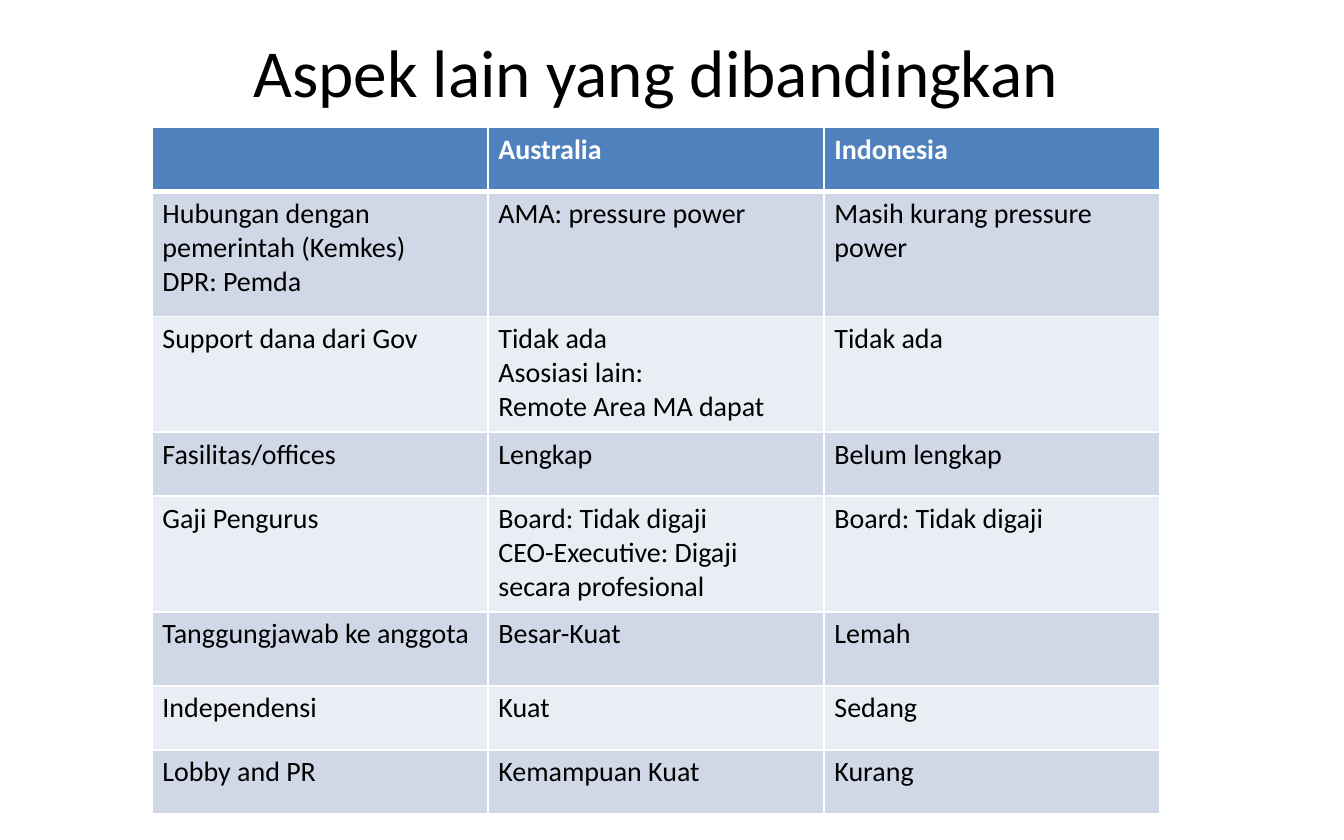
from lxml import etree
from pptx import Presentation
from pptx.dml.color import RGBColor
from pptx.enum import text
from pptx.oxml import ns
from pptx.util import Cm, Pt

LEFT, WIDTH = 2.87, 19.05
HEIGHTS = [1.21, 2.36, 2.19, 1.21, 2.19, 1.4, 1.21, 1.21]
ROWS = [
    ["", "Australia", "Indonesia"],
    ["Hubungan dengan pemerintah (Kemkes)\nDPR: Pemda", "AMA: pressure power", "Masih kurang pressure power"],
    ["Support dana dari Gov", "Tidak ada\nAsosiasi lain:\vRemote Area MA dapat", "Tidak ada"],
    ["Fasilitas/offices", "Lengkap", "Belum lengkap"],
    ["Gaji Pengurus", "Board: Tidak digaji\nCEO-Executive: Digaji secara profesional", "Board: Tidak digaji"],
    ["Tanggungjawab ke anggota", "Besar-Kuat", "Lemah"],
    ["Independensi", "Kuat", "Sedang"],
    ["Lobby and PR", "Kemampuan Kuat", "Kurang"],
]


def rgb(value):
    return RGBColor.from_string(value)


class Deck:
    font = "Calibri"
    white, black = "FFFFFF", "000000"
    header, bands = "4F81BD", ("E9EDF4", "D0D8E8")

    def __init__(self):
        self.prs = Presentation()
        self.prs.slide_width, self.prs.slide_height = Cm(25.4), Cm(15.88)
        self.s = self.prs.slides.add_slide(self.prs.slide_layouts[5])

    def style(self, p, size, color, bold=False):
        p.font.name, p.font.size, p.font.bold = self.font, Pt(size), bold
        p.font.color.rgb = rgb(color)

    def title(self, words, left, top, width, height):
        sp = self.s.shapes.title
        sp.left, sp.top, sp.width, sp.height = Cm(left), Cm(top), Cm(width), Cm(height)
        tf = sp.text_frame
        tf.text = words
        tf.auto_size = text.MSO_AUTO_SIZE.NONE
        tf.vertical_anchor = text.MSO_ANCHOR.MIDDLE
        tf.paragraphs[0].alignment = text.PP_ALIGN.CENTER
        self.style(tf.paragraphs[0], 36, self.black)

    def border(self, cell, side, width):
        tc_pr = cell._tc.get_or_add_tcPr()
        ln = etree.SubElement(tc_pr, ns.qn(f"a:ln{side}"), w=str(Pt(width)))
        fill = etree.SubElement(ln, ns.qn("a:solidFill"))
        etree.SubElement(fill, ns.qn("a:srgbClr"), val=self.white)

    def cell(self, cell, words, row):
        is_header = row == 0
        cell.text = words
        cell.margin_left = cell.margin_right = Cm(0.2)
        cell.margin_top = cell.margin_bottom = Cm(0.1)
        for p in cell.text_frame.paragraphs:
            self.style(p, 15, self.white if is_header else self.black, is_header)
        for side in "LRTB":
            thick = (row, side) in ((0, "B"), (1, "T"))
            self.border(cell, side, 3 if thick else 1)
        cell.fill.solid()
        cell.fill.fore_color.rgb = rgb(self.header if is_header else self.bands[row % 2])

    def table(self, rows, heights, left, top, width):
        columns = len(rows[0])
        frame = self.s.shapes.add_table(len(rows), columns, Cm(left), Cm(top), Cm(width), Cm(sum(heights)))
        table = frame.table
        for column in table.columns:
            column.width = Cm(width / columns)
        for i, (row, height) in enumerate(zip(rows, heights)):
            table.rows[i].height = Cm(height)
            for j, words in enumerate(row):
                self.cell(table.cell(i, j), words, i)


def main():
    deck = Deck()
    deck.title("Aspek lain yang dibandingkan", LEFT, 0.74, WIDTH, 1.19)
    deck.table(ROWS, HEIGHTS, LEFT, 2.41, WIDTH)
    deck.prs.save("out.pptx")


if __name__ == "__main__":
    main()
